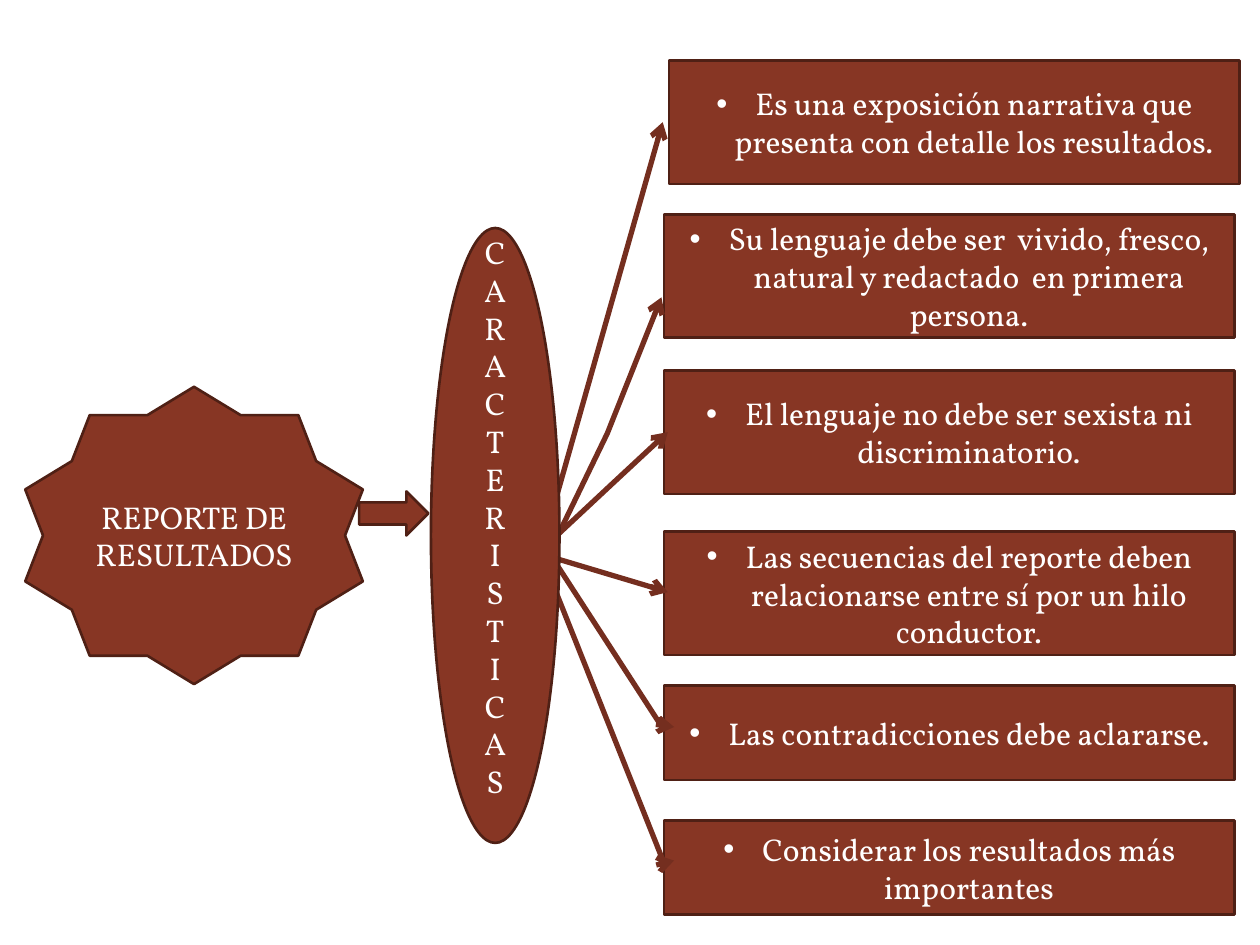
from lxml import etree
from pptx import Presentation
from pptx.dml.color import RGBColor
from pptx.enum.shapes import MSO_SHAPE
from pptx.enum.text import MSO_ANCHOR, PP_ALIGN
from pptx.oxml.ns import qn
from pptx.util import Inches, Pt

STAR, ARROW = MSO_SHAPE.STAR_10_POINT, MSO_SHAPE.RIGHT_ARROW
RECTANGLE, OVAL = MSO_SHAPE.RECTANGLE, MSO_SHAPE.OVAL
MIDDLE, CENTER = MSO_ANCHOR.MIDDLE, PP_ALIGN.CENTER

BRICK = RGBColor(0x87, 0x36, 0x24)
DARK = RGBColor(0x4F, 0x20, 0x15)
RUST = RGBColor(0x74, 0x2E, 0x1F)
WHITE = RGBColor(0xFF, 0xFF, 0xFF)
TEXT_FORMAT = {"name": "Vollkorn", "size": Pt(18)}
INDENT = Inches(0.31)

# Content
TOPIC = "REPORTE DE RESULTADOS"
HEADING = "CARACTERISTICAS"
BOX_LEFT, BOX_WIDTH, TALL, SHORT = 5.27, 4.53, 0.98, 0.75
FEATURES = [  # left, top, height, text
    (BOX_LEFT + 0.04, 0.48, TALL,
     "Es una exposición narrativa que presenta con detalle los resultados."),
    (BOX_LEFT, 1.7, TALL,
     "Su lenguaje debe ser  vivido, fresco, natural y redactado  en primera persona."),
    (BOX_LEFT, 2.94, TALL, "El lenguaje no debe ser sexista ni discriminatorio."),
    (BOX_LEFT, 4.22, TALL,
     "Las secuencias del reporte deben relacionarse entre sí por un hilo conductor."),
    (BOX_LEFT, 5.44, SHORT, "Las contradicciones debe aclararse."),
    (BOX_LEFT, 6.51, SHORT, "Considerar los resultados más importantes"),
]
# Each branch runs from one feature, behind the oval, to another feature
BRANCHES = [
    [(5.26, 0.97), (4.29, 4.39), (5.29, 6.9), (5.35, 6.83)],
    [(5.25, 2.36), (4.82, 3.44), (4.36, 4.39), (5.28, 5.81), (5.35, 5.77)],
    [(5.3, 3.43), (4.87, 3.83), (4.27, 4.39), (5.34, 4.71), (5.3, 4.7)],
]


def add_block(page, kind, left, top, width, height, lines=(), bulleted=False):
    """Add a filled shape with one centred paragraph for each line."""
    block = page.shapes.add_shape(kind, *map(Inches, (left, top, width, height)))
    block.shadow.inherit = False
    block.fill.solid()
    block.fill.fore_color.rgb = BRICK
    block.line.color.rgb = DARK
    block.line.width = Pt(1.5)
    frame = block.text_frame
    frame.word_wrap = True
    frame.vertical_anchor = MIDDLE
    for number, line in enumerate(lines):
        para = frame.add_paragraph() if number else frame.paragraphs[0]
        para.alignment = CENTER
        span = para.add_run()
        span.text = line
        for name, value in TEXT_FORMAT.items():
            setattr(span.font, name, value)
        span.font.color.rgb = WHITE
        if bulleted:
            properties = para._p.get_or_add_pPr()
            properties.set("marL", str(INDENT))
            properties.set("indent", str(-INDENT))
            etree.SubElement(properties, qn("a:buFont"), typeface="Arial")
            etree.SubElement(properties, qn("a:buChar"), char="•")
    return block


def add_branch(page, points):
    """Add an open line with an arrowhead at both ends."""
    start, *rest = [(Inches(x), Inches(y)) for x, y in points]
    builder = page.shapes.build_freeform(*start)
    builder.add_line_segments(rest, close=False)
    branch = builder.convert_to_shape()
    branch.shadow.inherit = False
    branch.fill.background()
    branch.line.color.rgb = RUST
    branch.line.width = Pt(3)
    outline = branch.line._get_or_add_ln()
    for end in ("a:headEnd", "a:tailEnd"):
        etree.SubElement(outline, qn(end), type="arrow")


def main():
    deck = Presentation()
    deck.slide_width, deck.slide_height = Inches(10), Inches(7.5)
    page = deck.slides.add_slide(deck.slide_layouts[6])

    # Topic and the arrow to its heading
    add_block(page, STAR, 0.2, 3.07, 2.68, 2.36, [TOPIC])
    add_block(page, ARROW, 2.85, 3.9, 0.55, 0.35)

    # Features
    for left, top, height, text in FEATURES:
        add_block(page, RECTANGLE, left, top, BOX_WIDTH, height, [text], bulleted=True)

    # Branches, with the heading oval over them
    for points in BRANCHES:
        add_branch(page, points)
    oval = add_block(page, OVAL, 3.42, 1.81, 1.02, 4.88, HEADING)
    oval.text_frame.margin_bottom = Inches(0.35)

    deck.save("out.pptx")


if __name__ == "__main__":
    main()
